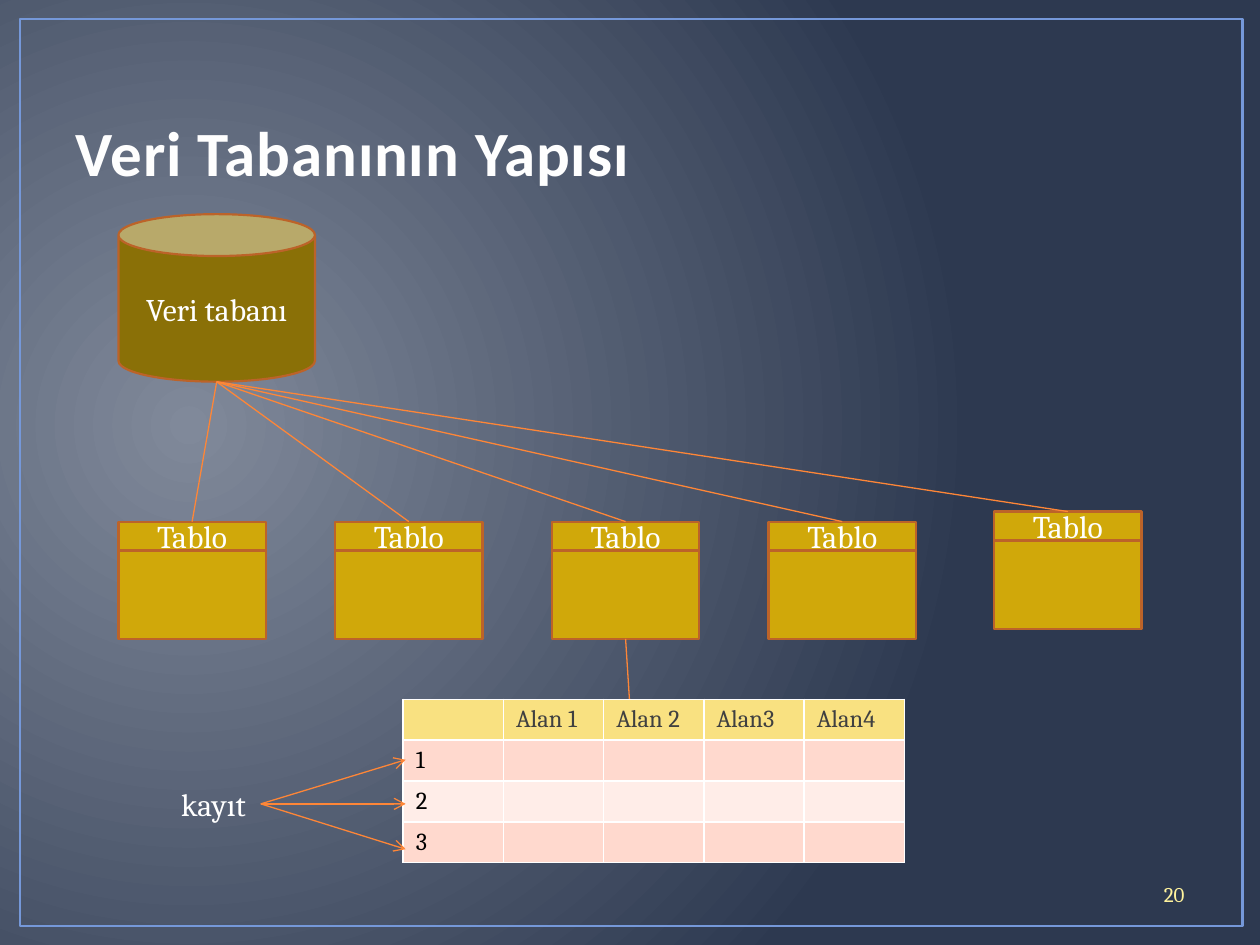
from lxml.etree import SubElement
from pptx import Presentation
from pptx.dml.color import RGBColor
from pptx.enum.shapes import MSO_CONNECTOR, MSO_SHAPE
from pptx.enum.text import MSO_ANCHOR, MSO_AUTO_SIZE, PP_ALIGN
from pptx.oxml.ns import qn
from pptx.util import Inches, Pt

COLORS = {
    "glow": "80899A", "night": "2D3950", "frame": "7598D9", "title": "FEFEFE",
    "can": "8A7007", "box": "D0A80A", "edge": "BC6329", "link": "FE8637",
    "white": "FFFFFF", "black": "000000", "header": "F9E181", "field": "404040",
    "odd": "FFD9CE", "even": "FFEDE8", "number": "FFF39D",
}


def rgb(name):
    return RGBColor.from_string(COLORS[name])


class Deck:
    """Holds the slide and its style, and draws each kind of element."""

    def __init__(self, slide, font="Cambria"):
        self.s = slide
        self.font = font

    def background(self, inner, outer):
        fill = self.s.background.fill
        fill.gradient()
        for stop, color in zip(fill.gradient_stops, (inner, outer)):
            stop.color.rgb = rgb(color)
        grad = self.s.element.find(".//" + qn("a:gradFill"))
        grad.remove(grad.find(qn("a:lin")))
        circle = SubElement(grad, qn("a:path"), {"path": "circle"})
        SubElement(circle, qn("a:fillToRect"), l="15000", t="50000", r="85000", b="60000")

    def set_text(self, tf, text, size, color, align=PP_ALIGN.LEFT, font=None, bold=False):
        p = tf.paragraphs[0]
        p.alignment = align
        p.font.size = Pt(size)
        p.font.name = font or self.font
        p.font.bold = bold
        p.font.color.rgb = rgb(color)
        if text:
            p.add_run().text = text
        else:
            SubElement(p._p, qn("a:endParaRPr"), sz=str(size * 100))

    def title(self, text, x, y, w, h):
        sp = self.s.shapes.title
        sp.left, sp.top, sp.width, sp.height = map(Inches, (x, y, w, h))
        tf = sp.text_frame
        tf.auto_size = MSO_AUTO_SIZE.NONE
        tf.vertical_anchor = MSO_ANCHOR.BOTTOM
        self.set_text(tf, text, 36, "title", font="Calibri", bold=True)
        tf.paragraphs[0].runs[0].font._element.set("spc", "50")

    def shape(self, kind, x, y, w, h, fill=None, line="edge", width=1.25, text="", parent=None):
        sp = (parent or self.s).shapes.add_shape(kind, *map(Inches, (x, y, w, h)))
        sp.shadow.inherit = False
        if fill:
            sp.fill.solid()
            sp.fill.fore_color.rgb = rgb(fill)
        else:
            sp.fill.background()
        sp.line.color.rgb = rgb(line)
        sp.line.width = Pt(width)
        if text:
            sp.text_frame.vertical_anchor = MSO_ANCHOR.MIDDLE
            self.set_text(sp.text_frame, text, 18, "white", PP_ALIGN.CENTER)
        return sp

    def entity(self, x, y, w=1.17, head=0.23, body=0.7):
        group = self.s.shapes.add_group_shape()
        kind = MSO_SHAPE.FLOWCHART_PROCESS
        top = self.shape(kind, x, y, w, head, "box", text="Tablo", parent=group)
        bottom = self.shape(kind, x, y + head, w, body, "box", parent=group)
        return top, bottom

    def line(self, start, end, begin=None, finish=None, arrow=False):
        cx = self.s.shapes.add_connector(MSO_CONNECTOR.STRAIGHT, *map(Inches, start + end))
        if begin:
            cx.begin_connect(*begin)
        if finish:
            cx.end_connect(*finish)
        cx.line.color.rgb = rgb("link")
        cx.line.width = Pt(0.75)
        if arrow:
            SubElement(cx.line._get_or_add_ln(), qn("a:tailEnd"), type="arrow")
        SubElement(cx._element.spPr, qn("a:effectLst"))

    def text(self, text, x, y, w, h, size, color, align=PP_ALIGN.LEFT, wrap=True):
        tf = self.s.shapes.add_textbox(*map(Inches, (x, y, w, h))).text_frame
        tf.word_wrap = wrap
        tf.vertical_anchor = MSO_ANCHOR.MIDDLE
        self.set_text(tf, text, size, color, align)

    def cell(self, cell, text, fill, color):
        self.set_text(cell.text_frame, text, 14, color)
        tcPr = cell._tc.get_or_add_tcPr()
        for side in ("a:lnL", "a:lnR", "a:lnT", "a:lnB"):
            ln = SubElement(tcPr, qn(side), w=str(int(Pt(1))))
            SubElement(SubElement(ln, qn("a:solidFill")), qn("a:srgbClr"), val=COLORS["white"])
        cell.fill.solid()
        cell.fill.fore_color.rgb = rgb(fill)

    def table(self, rows, x, y, w, h):
        shape = self.s.shapes.add_table(len(rows), len(rows[0]), *map(Inches, (x, y, w, h)))
        for i, row in enumerate(rows):
            fill = "header" if i == 0 else "odd" if i % 2 else "even"
            for j, text in enumerate(row):
                self.cell(shape.table.cell(i, j), text, fill, "black" if i else "field")


def main():
    prs = Presentation()
    prs.slide_width, prs.slide_height = Inches(10), Inches(7.5)
    deck = Deck(prs.slides.add_slide(prs.slide_layouts[5]))
    deck.background("glow", "night")
    deck.shape(MSO_SHAPE.RECTANGLE, 0.16, 0.15, 9.7, 7.2, line="frame", width=1.5)
    deck.title("Veri Tabanının Yapısı", 0.5, 0.3, 9, 1.25)

    deck.shape(MSO_SHAPE.CAN, 0.94, 1.7, 1.56, 1.33, "can", text="Veri tabanı")
    places = [(0.94 + 1.72 * i, 4.14) for i in range(4)] + [(7.89, 4.06)]
    entities = [deck.entity(x, y) for x, y in places]
    for (x, y), (head, body) in zip(places, entities):
        deck.line((1.72, 3.03), (x + 0.585, y), finish=(head, 0))
    deck.line((4.96, 5.07), (5, 5.62), begin=(entities[2][1], 2))

    rows = [["", "Alan 1", "Alan 2", "Alan3", "Alan4"]]
    rows += [[str(n), "", "", "", ""] for n in range(1, 4)]
    deck.table(rows, 3.2, 5.55, 3.98, 1.29)
    deck.text("kayıt", 1.34, 6.18, 0.74, 0.4, 18, "white", wrap=False)
    for y in (6.03, 6.38, 6.74):
        deck.line((2.07, 6.38), (3.22, y), arrow=True)
    deck.text("20", 7.17, 6.9, 2.33, 0.4, 12, "number", PP_ALIGN.RIGHT)
    prs.save("out.pptx")


if __name__ == "__main__":
    main()
